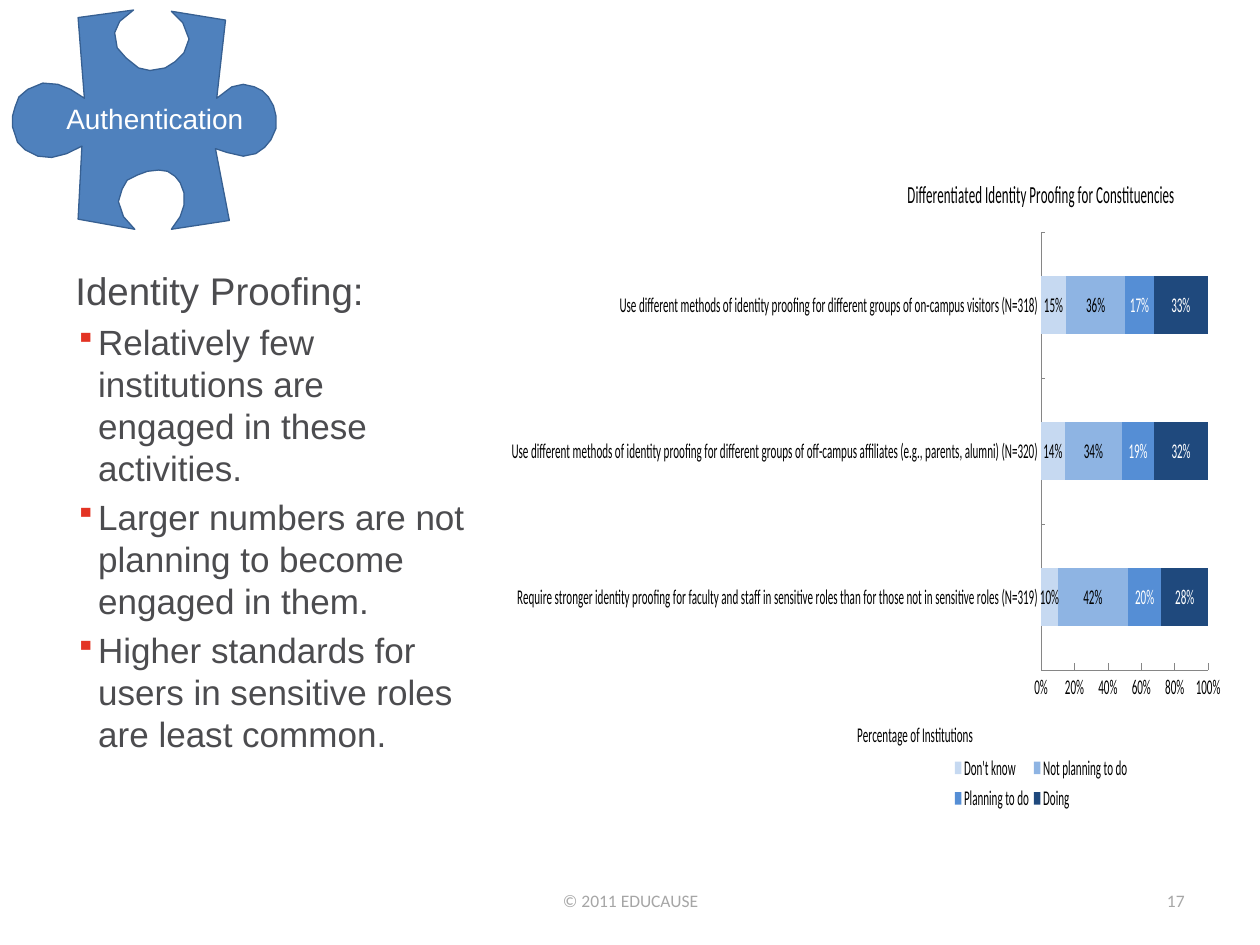
"""Build the identity proofing slide with its puzzle badge and stacked bar chart."""
from dataclasses import dataclass

from lxml import etree
from pptx import Presentation
from pptx import util as u
from pptx.chart import data
from pptx.dml import color
from pptx.enum import chart as ch
from pptx.enum import text
from pptx.oxml import ns


@dataclass(frozen=True)
class Theme:
    sans: str = "Arial"
    small: str = "Calibri"
    ink: str = "4C4C4F"
    black: str = "000000"
    white: str = "FFFFFF"
    grey: str = "A6A6A6"
    axis: str = "868686"
    mark: str = "E33323"
    piece: str = "4F81BD"
    edge: str = "376092"
    head: int = 22
    body: int = 20
    badge: int = 16
    title: int = 14
    label: int = 12
    foot: int = 10


@dataclass(frozen=True)
class Box:
    left: float
    top: float
    width: float
    height: float

    def emu(self) -> list:
        return [u.Pt(n) for n in (self.left, self.top, self.width, self.height)]


@dataclass(frozen=True)
class Line:
    words: str
    size: int
    tint: str
    font: str
    align: text.PP_ALIGN = text.PP_ALIGN.LEFT
    indent: float = 0
    bullet: bool = False
    before: float = 0


@dataclass(frozen=True)
class Series:
    name: str
    vals: tuple
    fill: str
    ink: str


T = Theme()
NOTES = (
    "Relatively few institutions are engaged in these activities.",
    "Larger numbers are not planning to become engaged in them.",
    "Higher standards for users in sensitive roles are least common.",
)
CATS = (
    "Require stronger identity proofing for faculty and staff in sensitive roles "
    "than for those not in sensitive roles (N=319)",
    "Use different methods of identity proofing for different groups of "
    "off-campus affiliates (e.g., parents, alumni) (N=320)",
    "Use different methods of identity proofing for different groups of "
    "on-campus visitors (N=318)",
)
SERIES = (
    Series("Don't know", (0.10, 0.14, 0.15), "C6D9F1", T.black),
    Series("Not planning to do", (0.42, 0.34, 0.36), "8EB4E3", T.black),
    Series("Planning to do", (0.20, 0.19, 0.17), "558ED5", T.white),
    Series("Doing", (0.28, 0.32, 0.33), "1F497D", T.white),
)
PUZZLE = (
    (172, 78), (179, 16), (136, 9), (145, 18), (150, 31), (146, 42), (139, 49),
    (131, 54), (119, 56), (110, 54), (100, 46), (93, 38), (91, 26), (95, 17),
    (106, 8), (62, 14), (67, 78), (56, 71), (46, 67), (34, 66), (22, 71),
    (15, 77), (12, 85), (10, 92), (10, 101), (14, 113), (20, 119), (30, 124),
    (41, 125), (53, 122), (65, 116), (62, 174), (107, 182), (98, 172), (94, 160),
    (97, 150), (101, 143), (109, 139), (117, 136), (126, 135), (133, 136),
    (139, 140), (143, 145), (146, 153), (146, 163), (143, 172), (136, 182),
    (182, 175), (171, 118), (180, 121), (193, 124), (203, 122), (210, 117),
    (215, 111), (219, 102), (219, 92), (217, 84), (213, 77), (208, 72),
    (202, 69), (193, 67), (184, 69),
)


def rgb(tint: str) -> color.RGBColor:
    return color.RGBColor.from_string(tint)


def style(font, size: int, tint: str, name: str) -> None:
    font.size, font.name, font.bold = u.Pt(size), name, False
    font.color.rgb = rgb(tint)


def write(shapes, box: Box, lines: list, anchor=text.MSO_ANCHOR.TOP, wrap=True) -> None:
    frame = shapes.add_textbox(*box.emu()).text_frame
    frame.word_wrap, frame.vertical_anchor = wrap, anchor
    for i, line in enumerate(lines):
        para = frame.add_paragraph() if i else frame.paragraphs[0]
        props = para._p.get_or_add_pPr()
        if line.indent:
            props.set("marL", str(u.Pt(line.indent)))
            props.set("indent", str(-u.Pt(line.indent)))
        if line.bullet:
            tint = etree.SubElement(props, ns.qn("a:buClr"))
            etree.SubElement(tint, ns.qn("a:srgbClr"), val=T.mark)
            etree.SubElement(props, ns.qn("a:buSzPct"), val="80000")
            etree.SubElement(props, ns.qn("a:buChar"), char="▪")
        para.alignment = line.align
        if line.before:
            para.space_before = u.Pt(line.before)
        run = para.add_run()
        run.text = line.words
        style(run.font, line.size, line.tint, line.font)


def badge(slide) -> None:
    group = slide.shapes.add_group_shape().shapes
    form = group.build_freeform(*PUZZLE[0], scale=u.Pt(0.72))
    form.add_line_segments(PUZZLE[1:], close=True)
    piece = form.convert_to_shape()
    piece.shadow.inherit = False
    piece.fill.solid()
    piece.fill.fore_color.rgb = rgb(T.piece)
    piece.line.color.rgb = rgb(T.edge)
    piece.line.width = u.Pt(0.75)
    line = Line("Authentication", T.badge, T.white, T.sans, text.PP_ALIGN.CENTER)
    write(group, Box(30.2, 54.7, 116.6, 26.6), [line], wrap=False)


def place(node, index: int, inner: bool = False, **spots: float) -> None:
    for old in node.findall(ns.qn("c:layout")):
        node.remove(old)
    layout = node.makeelement(ns.qn("c:layout"))
    node.insert(index, layout)
    manual = etree.SubElement(layout, ns.qn("c:manualLayout"))
    parts = {"layoutTarget": "inner"} if inner else {}
    parts |= {"xMode": "edge", "yMode": "edge", **spots}
    for key, val in parts.items():
        etree.SubElement(manual, ns.qn(f"c:{key}"), val=str(val))


def caption(title, words: str, size: int) -> None:
    run = title.text_frame.paragraphs[0].add_run()
    run.text = words
    style(run.font, size, T.black, T.small)


def draw(slide, box: Box) -> None:
    table = data.CategoryChartData(number_format="0%")
    table.categories = CATS
    for item in SERIES:
        table.add_series(item.name, item.vals)
    kind = ch.XL_CHART_TYPE.BAR_STACKED_100
    chart = slide.shapes.add_chart(kind, *box.emu(), table).chart
    style(chart.font, T.label, T.black, T.small)
    caption(chart.chart_title, "Differentiated Identity Proofing for Constituencies", T.title)
    plot = chart.plots[0]
    plot.gap_width, plot.overlap, plot.vary_by_categories = 150, 100, False
    for item, bars in zip(SERIES, plot.series):
        bars.format.fill.solid()
        bars.format.fill.fore_color.rgb = rgb(item.fill)
        tags = bars.data_labels
        tags.show_value, tags.number_format, tags.number_format_is_linked = True, "0%", False
        style(tags.font, T.label, item.ink, T.small)
    for axis in (chart.category_axis, chart.value_axis):
        axis.has_major_gridlines = False
        axis.major_tick_mark = ch.XL_TICK_MARK.INSIDE
        axis.minor_tick_mark = ch.XL_TICK_MARK.NONE
        axis.format.line.color.rgb = rgb(T.axis)
        style(axis.tick_labels.font, T.label, T.black, T.small)
    scale = chart.value_axis
    scale.minimum_scale, scale.maximum_scale, scale.major_unit = 0, 1, 0.2
    scale.tick_labels.number_format, scale.tick_labels.number_format_is_linked = "0%", False
    caption(scale.axis_title, "Percentage of Institutions", T.label)
    chart.has_legend = True
    chart.legend.position = ch.XL_LEGEND_POSITION.BOTTOM
    chart.legend.include_in_layout = False
    style(chart.legend.font, T.label, T.black, T.small)
    place(chart._chartSpace.chart.plotArea, 0, True, x=0.5, y=0.12, w=0.44, h=0.66)
    place(scale.axis_title._element, 1, x=0.01, y=0.85)
    place(chart.legend._element, 1, x=0.26, y=0.9, w=0.48, h=0.1)


def main() -> None:
    deck = Presentation()
    deck.slide_width, deck.slide_height = u.Pt(720), u.Pt(540)
    slide = deck.slides.add_slide(deck.slide_layouts[6])
    lines = [Line("Identity Proofing:", T.head, T.ink, T.sans, indent=13)]
    lines += [Line(n, T.body, T.ink, T.sans, indent=13, bullet=True, before=4) for n in NOTES]
    write(slide.shapes, Box(36, 149, 237, 306), lines)
    badge(slide)
    draw(slide, Box(292.3, 87.1, 411.1, 379.4))
    mid = text.MSO_ANCHOR.MIDDLE
    page = Line("17", T.foot, T.grey, T.small, text.PP_ALIGN.RIGHT)
    write(slide.shapes, Box(516.2, 500.4, 167.8, 28.8), [page], mid)
    foot = Line("© 2011 EDUCAUSE", T.foot, T.grey, T.small, text.PP_ALIGN.CENTER)
    write(slide.shapes, Box(246.2, 500.4, 228.2, 28.8), [foot], mid)
    deck.save("out.pptx")


if __name__ == "__main__":
    main()
